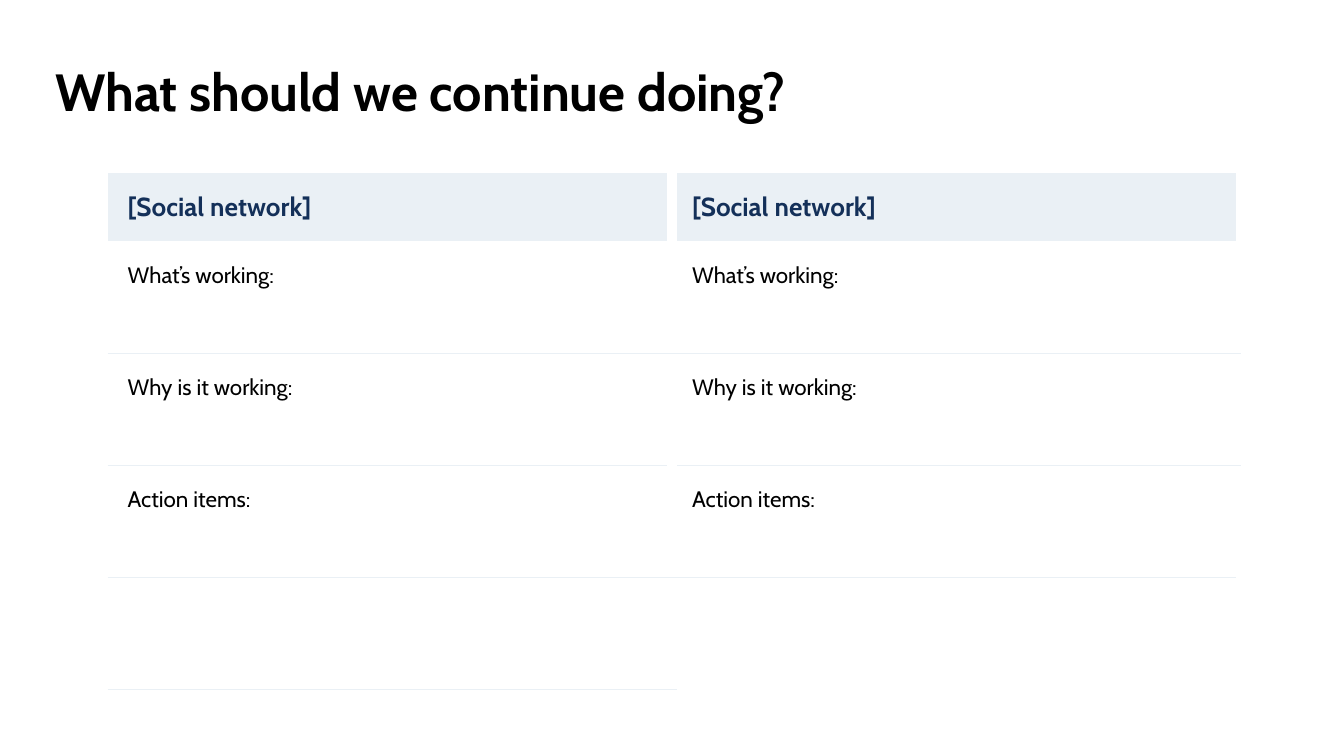
from lxml.etree import SubElement
from pptx import Presentation
from pptx.dml.color import RGBColor
from pptx.enum.text import MSO_ANCHOR as Anchor
from pptx.oxml.ns import qn
from pptx.util import Pt

FONT = "Cabin"
NO_STYLE = "{2D5ABB26-0587-4C30-8999-92F81FD0307C}"
WHITE, PALE, NAVY, BLACK = "FFFFFF", "EAF0F5", "143059", "000000"
BORDERS = {"L": (WHITE, 6), "R": (WHITE, 6), "T": (PALE, 0.75), "B": (PALE, 0.75)}
TITLE = {"size": Pt(28), "bold": True}
HEADER = {"size": Pt(14), "bold": True}
BODY = {"size": Pt(12), "bold": False}
ROWS = [
    ("[Social network]", ("R", "L")),
    ("What’s working:", ("B", "RB")),
    ("Why is it working:", ("TB", "RTB")),
    ("Action items:", ("RTB", "LTB")),
    ("", ("RTB", "LT")),
]


def color(value):
    return RGBColor.from_string(value)


def set_attrs(obj, values):
    for name, value in values.items():
        setattr(obj, name, value)


def margins(left, top, right, bottom):
    sides = ("left", "top", "right", "bottom")
    return {f"margin_{s}": Pt(v) for s, v in zip(sides, (left, top, right, bottom))}


def write(p, text, font, fill):
    r = p.add_run()
    r.text = text
    set_attrs(r.font, {"name": FONT, **font})
    r.font.color.rgb = color(fill)


def add_title(slide, text):
    tf = slide.shapes.add_textbox(Pt(25.2), Pt(28.1), Pt(601.2), Pt(42.5)).text_frame
    set_attrs(tf, {"word_wrap": True, **margins(4.3, 7.2, 7.2, 7.2)})
    p = tf.paragraphs[0]
    p.line_spacing = 0.9
    write(p, text, TITLE, BLACK)


def add_borders(cell, sides):
    tcPr = cell._tc.get_or_add_tcPr()
    for i, side in enumerate(sides):
        value, width = BORDERS[side]
        ln = SubElement(tcPr, qn(f"a:ln{side}"), w=str(Pt(width)))
        fill = SubElement(ln, qn("a:solidFill"))
        SubElement(fill, qn("a:srgbClr"), val=value)
        tcPr.insert(i, ln)


def format_cell(cell, text, sides, is_header):
    top = 7.2 if is_header else 10.8
    set_attrs(cell, margins(10.8, top, 10.8, 7.2))
    cell.vertical_anchor = Anchor.MIDDLE if is_header else Anchor.TOP
    if is_header:
        cell.fill.solid()
        cell.fill.fore_color.rgb = color(PALE)
    else:
        cell.fill.background()
    if text:
        font, fill = (HEADER, NAVY) if is_header else (BODY, BLACK)
        write(cell.text_frame.paragraphs[0], text, font, fill)
    add_borders(cell, sides)


def add_review_table(slide):
    heights = [36.5] + [60] * (len(ROWS) - 1)
    frame = slide.shapes.add_table(
        len(ROWS), 2, Pt(57.6), Pt(92.9), Pt(604.8), Pt(sum(heights)))
    table = frame.table
    set_attrs(table, {"first_row": False, "horz_banding": False})
    table._tbl.tblPr.find(qn("a:tableStyleId")).text = NO_STYLE
    for i, (text, borders) in enumerate(ROWS):
        table.rows[i].height = Pt(heights[i])
        for j, sides in enumerate(borders):
            format_cell(table.cell(i, j), text, sides, i == 0)


def main():
    prs = Presentation()
    set_attrs(prs, {"slide_width": Pt(720), "slide_height": Pt(405)})
    slide = prs.slides.add_slide(prs.slide_layouts[6])
    add_review_table(slide)
    add_title(slide, "What should we continue doing?")
    prs.save("out.pptx")


if __name__ == "__main__":
    main()
